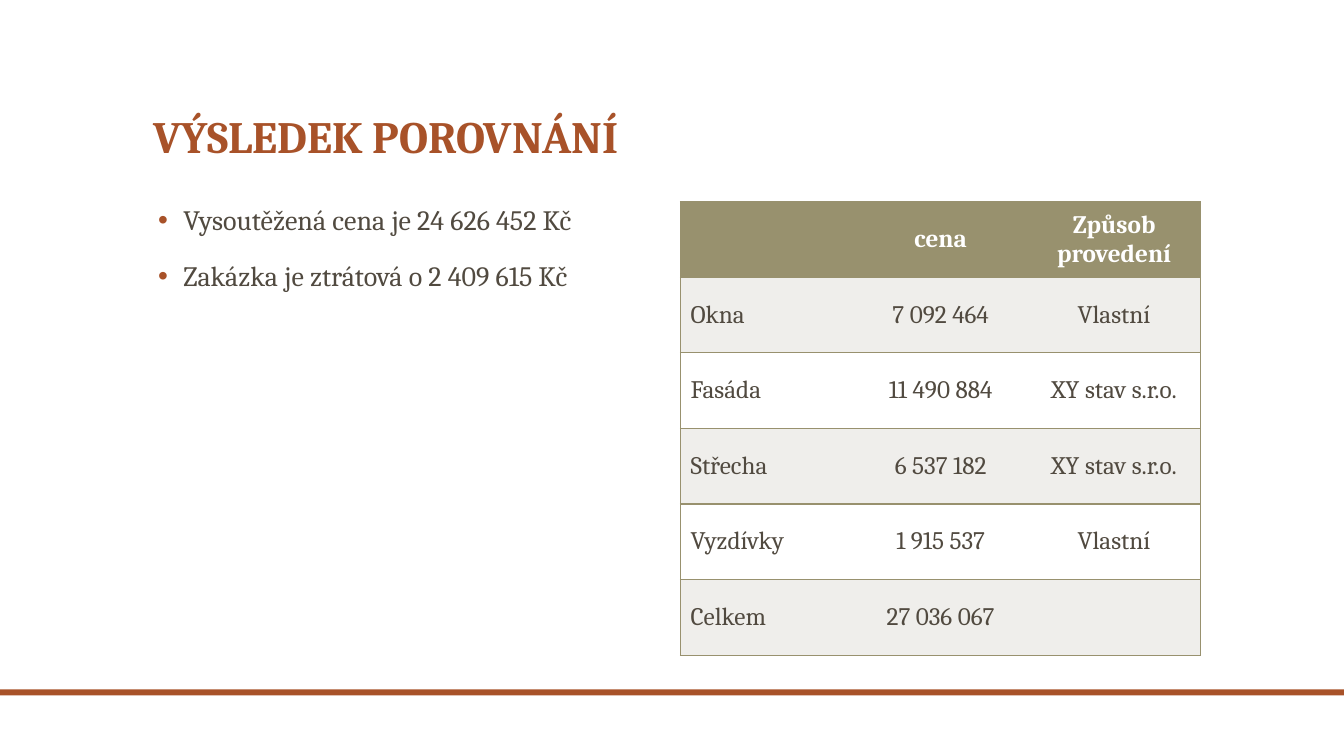
"""Builds the slide with the bid comparison result and its price table."""
from lxml import etree
from pptx import Presentation, util as u
from pptx.dml.color import RGBColor
from pptx.enum import shapes, text
from pptx.oxml import ns

THEME = dict(font="Cambria", rust="A85229", ink="514A40", olive="98916E",
             band="EFEEEB", white="FFFFFF", head=32, body=20, cell=18)
WIDE, HIGH = 13.33, 7.5
EDGE, COL, ROW = 1.42, 1.72, HIGH / 10
HALF = 3 * COL
TOP = 2


def write(frame, lines, size, color, bold=False, align=text.PP_ALIGN.LEFT,
          lead=1.0, gap=0, dot=None):
    """Fill a text frame with one formatted paragraph per line."""
    frame.word_wrap = True
    for i, line in enumerate(lines):
        para = frame.paragraphs[0] if i == 0 else frame.add_paragraph()
        para.alignment = align
        para.line_spacing = lead
        para.space_before = u.Pt(gap if i else 0)
        if dot:
            props = para._p.get_or_add_pPr()
            props.set("marL", str(u.Inches(0.3)))
            props.set("indent", str(u.Inches(-0.25)))
            tint = etree.SubElement(props, ns.qn("a:buClr"))
            etree.SubElement(tint, ns.qn("a:srgbClr"), val=dot)
            face = etree.SubElement(props, ns.qn("a:buFont"))
            face.set("typeface", "Arial")
            etree.SubElement(props, ns.qn("a:buChar"), char="•")
        run = para.add_run()
        run.text = line
        run.font.name = THEME["font"]
        run.font.size = u.Pt(size)
        run.font.bold = bold
        run.font.color.rgb = RGBColor.from_string(color)


def rule(cell, sides):
    """Draw thin olive borders on the given sides of a cell."""
    props = cell._tc.get_or_add_tcPr()
    for i, side in enumerate(sides):
        line = etree.Element(ns.qn("a:ln" + side), w=str(u.Pt(1)))
        fill = etree.SubElement(line, ns.qn("a:solidFill"))
        etree.SubElement(fill, ns.qn("a:srgbClr"), val=THEME["olive"])
        props.insert(i, line)


deck = Presentation()
deck.slide_width, deck.slide_height = u.Inches(WIDE), u.Inches(HIGH)
slide = deck.slides.add_slide(deck.slide_layouts[6])

bar = slide.shapes.add_shape(shapes.MSO_SHAPE.RECTANGLE, 0, u.Inches(6.84),
                             u.Inches(WIDE), u.Inches(0.06))
bar.shadow.inherit = False
bar.fill.solid()
bar.fill.fore_color.rgb = RGBColor.from_string(THEME["rust"])
bar.line.fill.background()

title = slide.shapes.add_textbox(u.Inches(EDGE), u.Inches(0.42),
                                 u.Inches(WIDE - 2 * EDGE), u.Inches(1.25))
title.text_frame.vertical_anchor = text.MSO_ANCHOR.BOTTOM
write(title.text_frame, ["VÝSLEDEK POROVNÁNÍ"], THEME["head"],
      THEME["rust"], bold=True, lead=0.9)

body = slide.shapes.add_textbox(u.Inches(EDGE), u.Inches(TOP),
                                u.Inches(HALF), u.Inches(6 * ROW))
write(body.text_frame, ["Vysoutěžená cena je 24 626 452 Kč",
                        "Zakázka je ztrátová o 2 409 615 Kč"],
      THEME["body"], THEME["ink"], lead=0.9, gap=18, dot=THEME["rust"])

DATA = [
    ("", "cena", "Způsob provedení"),
    ("Okna", "7 092 464", "Vlastní"),
    ("Fasáda", "11 490 884", "XY stav s.r.o."),
    ("Střecha", "6 537 182", "XY stav s.r.o."),
    ("Vyzdívky", "1 915 537", "Vlastní"),
    ("Celkem", "27 036 067", ""),
]
frame = slide.shapes.add_table(len(DATA), 3, u.Inches(WIDE - EDGE - HALF),
                               u.Inches(TOP), u.Inches(HALF),
                               u.Inches(len(DATA) * ROW))
table = frame.table
plain = "{2D5ABB26-0587-4C30-8999-92F81FD0307C}"
table._tbl.tblPr.find(ns.qn("a:tableStyleId")).text = plain
table.horz_banding = False
for col in table.columns:
    col.width = u.Inches(COL)
for r, row in enumerate(DATA):
    table.rows[r].height = u.Inches(ROW)
    shade = "olive" if r == 0 else "band" if r % 2 else "white"
    for c, word in enumerate(row):
        cell = table.cell(r, c)
        cell.vertical_anchor = text.MSO_ANCHOR.MIDDLE
        cell.fill.solid()
        cell.fill.fore_color.rgb = RGBColor.from_string(THEME[shade])
        rule(cell, ["LTB", "TB", "RTB"][c])
        if word:
            write(cell.text_frame, [word], THEME["cell"],
                  THEME["ink" if r else "white"], bold=r == 0,
                  align=text.PP_ALIGN.CENTER if c else text.PP_ALIGN.LEFT)

deck.save("out.pptx")
